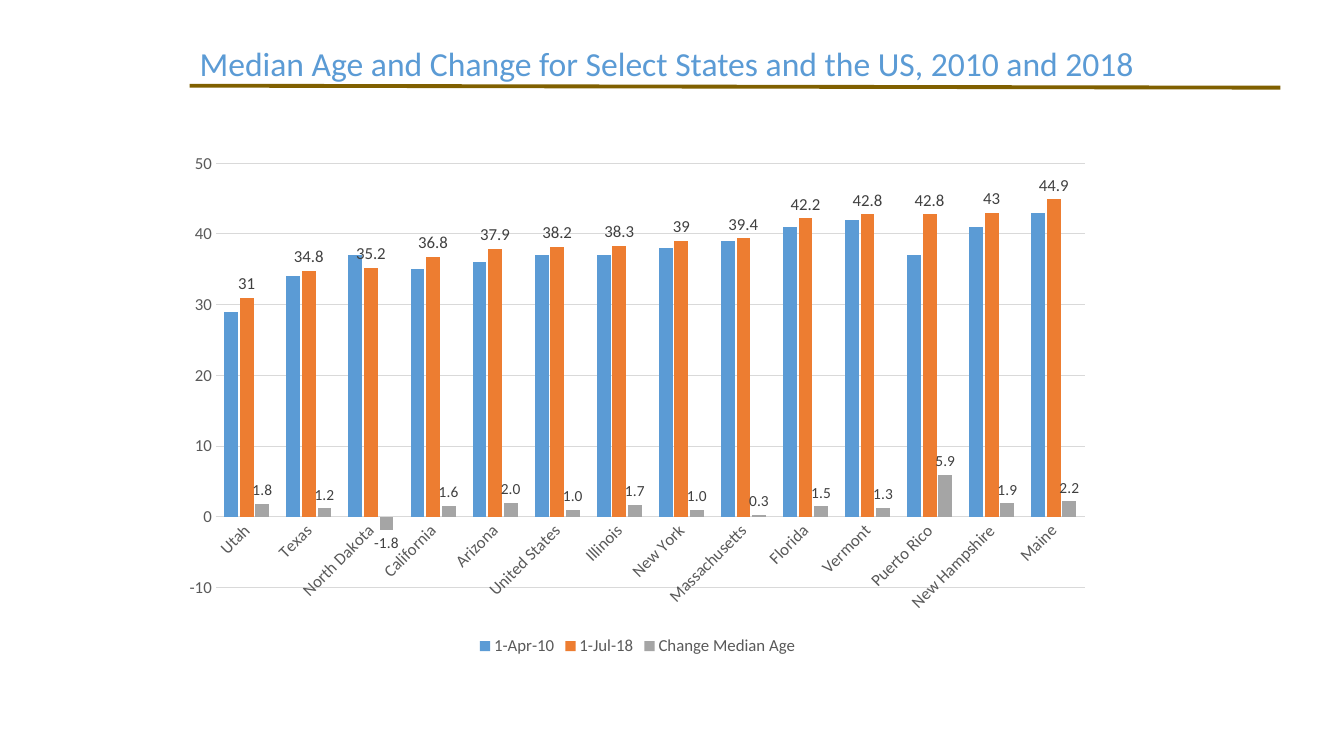
from lxml import etree
from pptx import Presentation
from pptx.chart.data import CategoryChartData
from pptx.dml.color import RGBColor
from pptx.enum.chart import (XL_CHART_TYPE as ChartType, XL_LABEL_POSITION as LabelPosition,
                             XL_LEGEND_POSITION as LegendPosition, XL_TICK_MARK as TickMark)
from pptx.enum.shapes import MSO_CONNECTOR as Connector
from pptx.enum.text import MSO_ANCHOR as Anchor, PP_ALIGN as Align
from pptx.oxml.ns import qn
from pptx.util import Inches, Pt

FONT = "Calibri"
COLORS = {"blue": "5B9BD5", "orange": "ED7D31", "gray": "A5A5A5", "rule": "806000",
          "grid": "D9D9D9", "axis": "595959", "label": "404040", "black": "000000"}

# State: (median age 2010, median age 2018, change)
MEDIAN_AGES = {
    "Utah": (29, 31, 1.8),
    "Texas": (34, 34.8, 1.2),
    "North Dakota": (37, 35.2, -1.8),
    "California": (35, 36.8, 1.6),
    "Arizona": (36, 37.9, 2),
    "United States": (37, 38.2, 1),
    "Illinois": (37, 38.3, 1.7),
    "New York": (38, 39, 1),
    "Massachusetts": (39, 39.4, 0.3),
    "Florida": (41, 42.2, 1.5),
    "Vermont": (42, 42.8, 1.3),
    "Puerto Rico": (37, 42.8, 5.9),
    "New Hampshire": (41, 43, 1.9),
    "Maine": (43, 44.9, 2.2),
}
# Name, color, label size, label number format
SERIES = [("1-Apr-10", "blue", None, None),
          ("1-Jul-18", "orange", 12, "General"),
          ("Change Median Age", "gray", 11, "0.0")]


def color(name):
    return RGBColor.from_string(COLORS[name])


def style_font(font, size, color_name):
    font.name = FONT
    font.size = Pt(size)
    font.bold = False
    font.color.rgb = color(color_name)


def style_line(line, color_name, width):
    line.color.rgb = color(color_name)
    line.width = Pt(width)


def add_title(page, left, top, width, height):
    # Title text
    title = page.shapes.title
    title.left, title.top = Inches(left), Inches(top)
    title.width, title.height = Inches(width), Inches(height)
    frame = title.text_frame
    frame.text = "Median Age and Change for Select States and the US, 2010 and 2018"
    frame.word_wrap = True
    frame.vertical_anchor = Anchor.MIDDLE
    para = frame.paragraphs[0]
    para.alignment = Align.LEFT
    para.line_spacing = 0.9
    style_font(para.runs[0].font, 24, "blue")

    # Rule under the title
    rule = page.shapes.add_connector(Connector.STRAIGHT, Inches(left), Inches(top + 0.79),
                                     Inches(left + 10.82), Inches(top + 0.81))
    style_line(rule.line, "rule", 2.75)
    etree.SubElement(rule._element.spPr, qn("a:effectLst"))


def style_axes(chart):
    category_axis, value_axis = chart.category_axis, chart.value_axis
    for axis in (category_axis, value_axis):
        axis.major_tick_mark = axis.minor_tick_mark = TickMark.NONE
        style_font(axis.tick_labels.font, 12, "axis")
    style_line(category_axis.format.line, "grid", 0.75)
    text_body = category_axis._element.find(qn("c:txPr")).find(qn("a:bodyPr"))
    text_body.set("rot", "-2700000")
    text_body.set("vert", "horz")

    value_axis.minimum_scale, value_axis.maximum_scale = -10, 50
    value_axis.major_unit = 10
    value_axis.format.line.fill.background()
    style_line(value_axis.major_gridlines.format.line, "grid", 0.75)


def style_series(plot):
    plot.gap_width, plot.overlap = 124, -13
    plot.vary_by_categories = False
    for series, (_, fill, label_size, number_format) in zip(plot.series, SERIES):
        series.invert_if_negative = False
        series.format.fill.solid()
        series.format.fill.fore_color.rgb = color(fill)
        if label_size:
            labels = series.data_labels
            labels.show_value = True
            labels.position = LabelPosition.OUTSIDE_END
            labels.number_format = number_format
            labels.number_format_is_linked = False
            style_font(labels.font, label_size, "label")


def place_plot(chart, fractions):
    # Inner plot area as fractions of the chart box
    plot_area = chart._chartSpace.chart.plotArea
    layout = plot_area.find(qn("c:layout"))
    if layout is None:
        layout = etree.Element(qn("c:layout"))
        plot_area.insert(0, layout)
    manual = etree.SubElement(layout, qn("c:manualLayout"))
    settings = {"layoutTarget": "inner", "xMode": "edge", "yMode": "edge", **fractions}
    for tag, value in settings.items():
        etree.SubElement(manual, qn(f"c:{tag}")).set("val", str(value))


def add_age_chart(page, left, top, width, height):
    data = CategoryChartData()
    data.categories = list(MEDIAN_AGES)
    for (name, *_), values in zip(SERIES, zip(*MEDIAN_AGES.values())):
        data.add_series(name, values)
    chart = page.shapes.add_chart(ChartType.COLUMN_CLUSTERED, Inches(left), Inches(top),
                                  Inches(width), Inches(height), data).chart
    chart.has_title = False
    style_font(chart.font, 10, "black")
    style_axes(chart)
    style_series(chart.plots[0])
    place_plot(chart, {"x": 0.44 / width, "y": 0.17 / height,
                       "w": 8.62 / width, "h": 4.21 / height})

    # Legend
    chart.has_legend = True
    chart.legend.position = LegendPosition.BOTTOM
    chart.legend.include_in_layout = False
    style_font(chart.legend.font, 12, "axis")


def main():
    deck = Presentation()
    deck.slide_width, deck.slide_height = Inches(13.33), Inches(7.5)
    page = deck.slides.add_slide(deck.slide_layouts[5])
    add_title(page, 1.88, 0.06, 9.94, 1.18)
    add_age_chart(page, 1.7, 1.45, 9.25, 5.1)
    deck.save("out.pptx")


if __name__ == "__main__":
    main()
